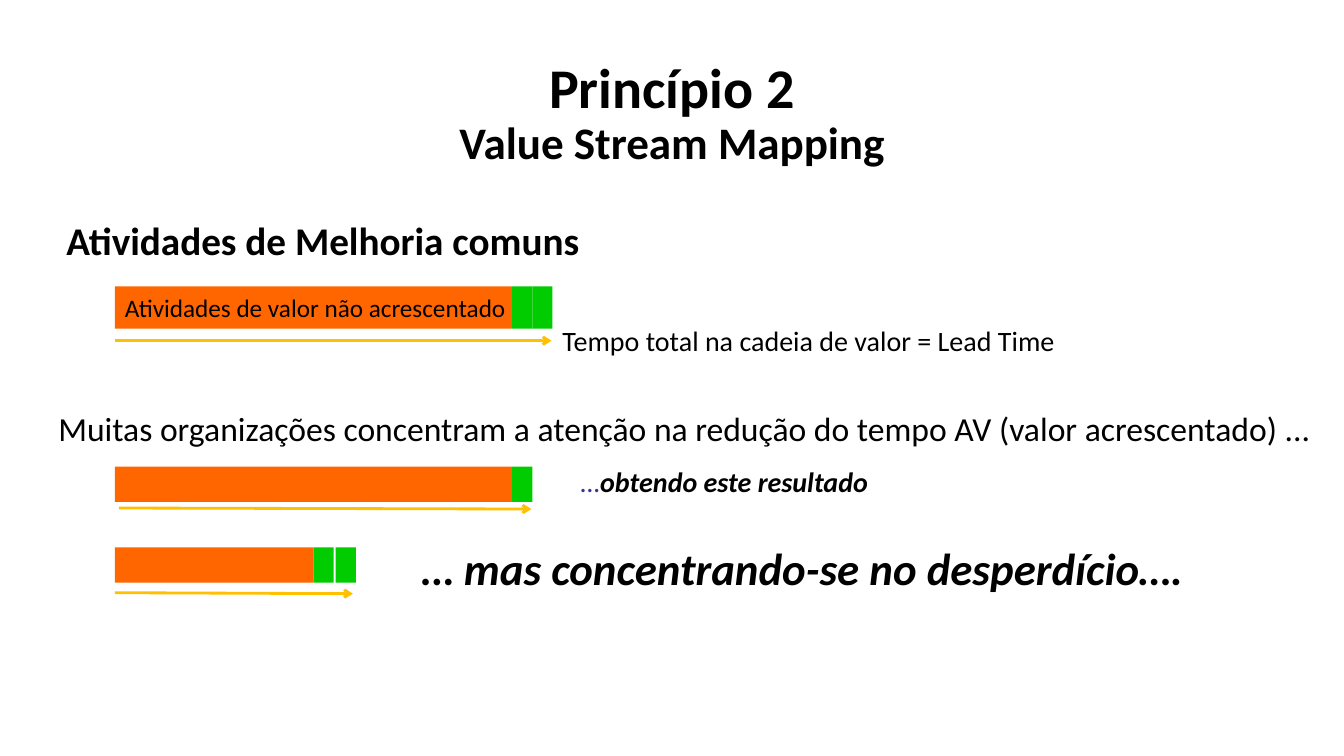
from pptx import Presentation
from pptx.dml.color import RGBColor
from pptx.enum.shapes import MSO_CONNECTOR as CONNECTOR, MSO_SHAPE as SHAPE
from pptx.enum.text import MSO_ANCHOR as ANCHOR, PP_ALIGN as ALIGN
from pptx.oxml.ns import qn
from pptx.util import Inches, Pt
from lxml import etree

COLORS = {
    "text": "000000",
    "ellipsis": "333399",
    "waste": "FF6600",
    "value": "00CC00",
    "arrow": "FFC000",
}
FONT = "Calibri"
BAR_LEFT = 1.14
VALUE_WIDTH = 0.2

presentation = Presentation()
presentation.slide_width = Inches(13.33)
presentation.slide_height = Inches(7.5)
slide = presentation.slides.add_slide(presentation.slide_layouts[6])


def write(paragraph, text, size=20, color="text", bold=False, italic=False,
          align=ALIGN.LEFT, line_spacing=None):
    paragraph.alignment = align
    if line_spacing:
        paragraph.line_spacing = line_spacing
    run = paragraph.add_run()
    run.text = text
    run.font.name = FONT
    run.font.size = Pt(size)
    run.font.bold = bold
    run.font.italic = italic
    run.font.color.rgb = RGBColor.from_string(COLORS[color])


def add_frame(left, top, width, height, wrap=True, anchor=ANCHOR.TOP):
    box = slide.shapes.add_textbox(Inches(left), Inches(top), Inches(width), Inches(height))
    box.text_frame.word_wrap = wrap
    box.text_frame.vertical_anchor = anchor
    return box.text_frame


title = add_frame(0, 0.48, 13.33, 1.31, anchor=ANCHOR.MIDDLE)
write(title.paragraphs[0], "Princípio 2", size=40, bold=True, align=ALIGN.CENTER, line_spacing=0.9)
write(title.add_paragraph(), "Value Stream Mapping", size=32.2, bold=True,
      align=ALIGN.CENTER, line_spacing=0.9)

heading = add_frame(0.56, 2.15, 8.49, 0.59)
write(heading.paragraphs[0], "Atividades de Melhoria comuns", size=28, bold=True, line_spacing=0.9)

lead_time = add_frame(5.48, 3.16, 6.98, 0.44)
write(lead_time.paragraphs[0], "Tempo total na cadeia de valor = Lead Time")

focus = add_frame(0.48, 4, 12.72, 0.51)
write(focus.paragraphs[0],
      "Muitas organizações concentram a atenção na redução do tempo AV (valor acrescentado) ...",
      size=24)

result = add_frame(5.63, 4.56, 3.11, 0.44, wrap=False).paragraphs[0]
write(result, "…", color="ellipsis", italic=True, align=ALIGN.CENTER)
write(result, "obtendo este resultado", bold=True, italic=True, align=ALIGN.CENTER)

waste_focus = add_frame(4.05, 5.32, 7.83, 0.64, wrap=False)
write(waste_focus.paragraphs[0], "… mas concentrando-se no desperdício….", size=32,
      bold=True, italic=True, align=ALIGN.CENTER)

streams = [
    (2.84, 0.42, 3.94, [5.08, 5.28], (1.14, 3.38, 5.47, 3.38), "Atividades de valor não acrescentado"),
    (4.63, 0.35, 3.94, [5.08], (1.18, 5.04, 5.27, 5.05), ""),
    (5.43, 0.35, 1.97, [3.11, 3.33], (1.14, 5.88, 3.5, 5.89), ""),
]
for top, height, waste_width, value_lefts, arrow_ends, label in streams:
    bars = [(BAR_LEFT, waste_width, "waste", label)]
    bars += [(left, VALUE_WIDTH, "value", "") for left in value_lefts]
    for left, width, color, text in bars:
        bar = slide.shapes.add_shape(SHAPE.RECTANGLE, Inches(left), Inches(top),
                                     Inches(width), Inches(height))
        bar.shadow.inherit = False
        bar.fill.solid()
        bar.fill.fore_color.rgb = RGBColor.from_string(COLORS[color])
        bar.line.fill.background()
        if text:
            bar.text_frame.word_wrap = False
            bar.text_frame.vertical_anchor = ANCHOR.MIDDLE
            write(bar.text_frame.paragraphs[0], text, size=18)

    arrow = slide.shapes.add_connector(CONNECTOR.STRAIGHT, *[Inches(value) for value in arrow_ends])
    arrow.line.width = Pt(2)
    arrow.line.color.rgb = RGBColor.from_string(COLORS["arrow"])
    etree.SubElement(arrow.line._get_or_add_ln(), qn("a:tailEnd"), type="arrow")
    etree.SubElement(arrow._element.spPr, qn("a:effectLst"))

presentation.save("out.pptx")
